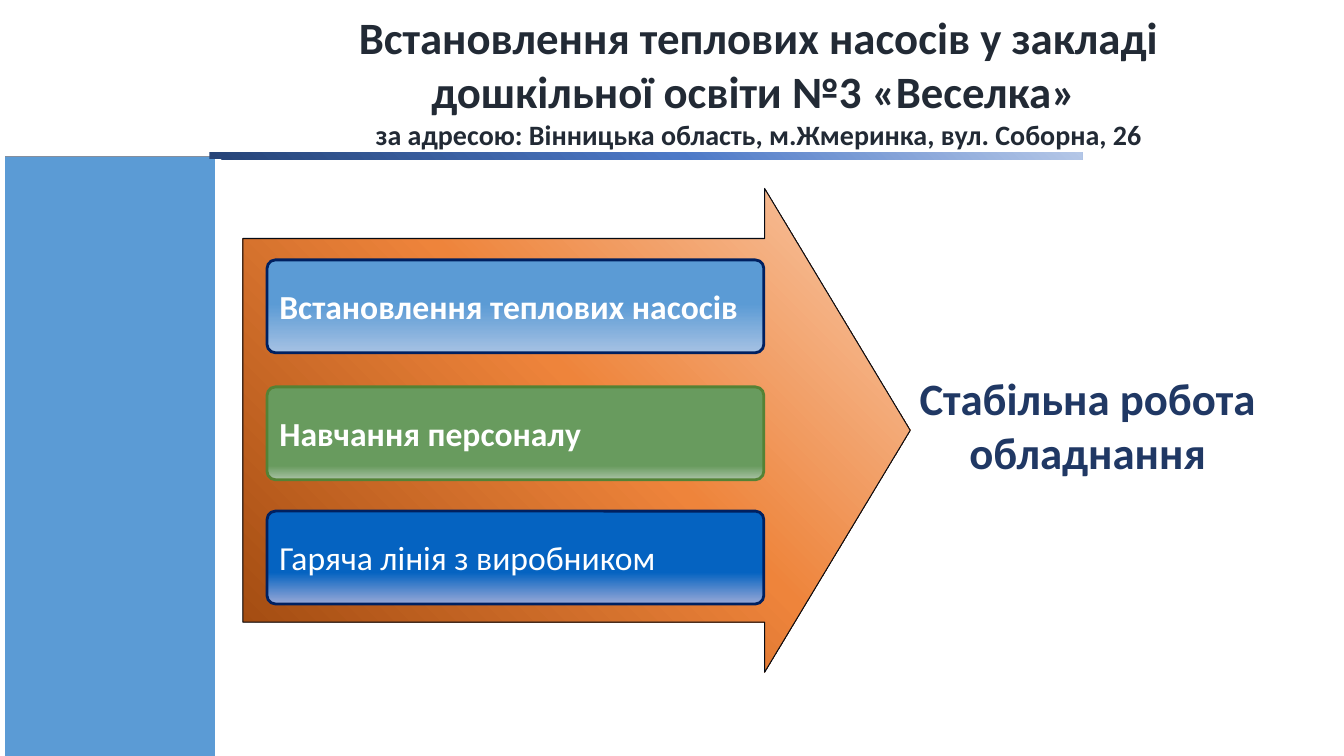
import lxml.etree
import pptx
import pptx.dml.color
import pptx.enum.dml
import pptx.enum.shapes
import pptx.enum.text
import pptx.oxml.ns
import pptx.util

Cm, Pt = pptx.util.Cm, pptx.util.Pt
RGBColor = pptx.dml.color.RGBColor
SHAPE = pptx.enum.shapes.MSO_SHAPE
ALIGN = pptx.enum.text.PP_ALIGN
ANCHOR = pptx.enum.text.MSO_ANCHOR
qn = pptx.oxml.ns.qn

WHITE = RGBColor(0xFF, 0xFF, 0xFF)
SKY = RGBColor(0x5B, 0x9B, 0xD5)
SLATE = RGBColor(0x44, 0x54, 0x6A)
INK = RGBColor(0x22, 0x2A, 0x35)
NAVY = RGBColor(0x20, 0x38, 0x64)
DEEP_NAVY = RGBColor(0x00, 0x20, 0x60)
GREEN_EDGE = RGBColor(0x54, 0x82, 0x35)
NEAR_BLACK = RGBColor(0x06, 0x0B, 0x14)
BLUE_FADE = [(0, RGBColor(0xB4, 0xC7, 0xE7)), (46, RGBColor(0x4D, 0x79, 0xC7)),
             (100, RGBColor(0x26, 0x44, 0x78))]
ORANGE_FADE = [(0, RGBColor(0xF8, 0xCB, 0xAD)), (46, RGBColor(0xEE, 0x84, 0x3B)),
               (100, RGBColor(0x9E, 0x48, 0x0E))]
SKY_FADE = [(47, SKY), (100, RGBColor(0xA5, 0xC1, 0xE3))]
GREEN_FADE = [(85, RGBColor(0x68, 0x9B, 0x5E)), (100, RGBColor(0xAA, 0xC2, 0xA6))]
ROYAL_FADE = [(66, RGBColor(0x05, 0x63, 0xC1)), (100, RGBColor(0x98, 0xA8, 0xD6))]

HEADING = "Встановлення теплових насосів у закладі дошкільної освіти №3 «Веселка» "
ADDRESS = "за адресою: Вінницька область, м.Жмеринка, вул. Соборна, 26"
MEASURES = [
    ("Встановлення теплових насосів", 6.55, SKY_FADE, DEEP_NAVY, True),
    ("Навчання персоналу", 9.75, GREEN_FADE, GREEN_EDGE, True),
    ("Гаряча лінія з виробником", 12.88, ROYAL_FADE, DEEP_NAVY, False),
]
OUTCOME = "Стабільна робота обладнання"

CORNER = 0.091
RADIAL = ('<a:path {ns} path="circle"><a:fillToRect l="100000" t="0" r="0" b="100000"/></a:path>')
DOWNWARD = '<a:lin {ns} ang="5400000" scaled="1"/>'


def apply(target, **values):
    """Set every given format value on the target."""
    for attribute, value in values.items():
        setattr(target, attribute, value)


def add_part(slide, preset, box, adjustments=()):
    """Add a shape without shadow, fill or outline, placed in centimetres."""
    part = slide.shapes.add_shape(preset, *map(Cm, box))
    part.shadow.inherit = False
    part.fill.background()
    part.line.fill.background()
    for index, value in enumerate(adjustments):
        part.adjustments[index] = value
    return part


def fade(part, stops, direction):
    """Fill a shape with gradient stops running in a direction."""
    part.fill.gradient()
    gradient = part.fill._xPr.find(qn("a:gradFill"))
    for child in list(gradient):
        gradient.remove(child)
    stop_list = lxml.etree.SubElement(gradient, qn("a:gsLst"))
    for position, colour in stops:
        stop = lxml.etree.SubElement(stop_list, qn("a:gs"), pos=str(position * 1000))
        lxml.etree.SubElement(stop, qn("a:srgbClr"), val=str(colour))
    gradient.append(pptx.oxml.parse_xml(direction.format(ns=pptx.oxml.ns.nsdecls("a"))))


def outline(part, colour, width):
    """Draw a solid outline around a shape."""
    part.line.color.rgb = colour
    part.line.width = Pt(width)


def write(paragraph, text, size, colour, bold=True):
    """Add one formatted run to a paragraph."""
    run = paragraph.add_run()
    run.text = text
    apply(run.font, name="Calibri", size=Pt(size), bold=bold)
    run.font.color.rgb = colour


def build():
    """Build the slide and save it."""
    deck = pptx.Presentation()
    apply(deck, slide_width=Cm(33.87), slide_height=Cm(19.05))
    slide = deck.slides.add_slide(deck.slide_layouts[5])

    sidebar = add_part(slide, SHAPE.RECTANGLE, (0.13, 3.94, 5.28, 15.11))
    sidebar.fill.patterned()
    sidebar.fill.pattern = pptx.enum.dml.MSO_PATTERN.DARK_HORIZONTAL
    sidebar.fill.fore_color.rgb = SKY
    sidebar.fill.back_color.rgb = SLATE

    divider = add_part(slide, SHAPE.RECTANGLE, (5.28, 3.84, 22, 0.18))
    fade(divider, BLUE_FADE, RADIAL)

    arrow = add_part(slide, SHAPE.RIGHT_ARROW, (6.12, 4.75, 16.82, 12.19), (0.793, 0.301))
    fade(arrow, ORANGE_FADE, RADIAL)
    outline(arrow, NEAR_BLACK, 0.75)

    for text, top, stops, edge, bold in MEASURES:
        measure = add_part(slide, SHAPE.ROUNDED_RECTANGLE, (6.73, top, 12.52, 2.34), (CORNER,))
        fade(measure, stops, DOWNWARD)
        outline(measure, edge, 2)
        apply(measure.text_frame, word_wrap=False, vertical_anchor=ANCHOR.MIDDLE)
        line = measure.text_frame.paragraphs[0]
        line.alignment = ALIGN.JUSTIFY
        write(line, text, 24, WHITE, bold)

    outcome = add_part(slide, SHAPE.ROUNDED_RECTANGLE, (22.73, 8.89, 9.37, 3.61), (CORNER,))
    apply(outcome.text_frame, word_wrap=True, vertical_anchor=ANCHOR.MIDDLE)
    line = outcome.text_frame.paragraphs[0]
    line.alignment = ALIGN.CENTER
    write(line, OUTCOME, 32, NAVY)

    title = slide.shapes.title
    apply(title, left=Cm(6.12), top=Cm(0.74), width=Cm(26.01), height=Cm(2.59))
    apply(title.text_frame, word_wrap=True, vertical_anchor=ANCHOR.MIDDLE,
          auto_size=pptx.enum.text.MSO_AUTO_SIZE.NONE)
    line = title.text_frame.paragraphs[0]
    line.alignment = ALIGN.CENTER
    write(line, HEADING, 32, INK)
    line.add_line_break()
    write(line, ADDRESS, 20, INK)

    deck.save("out.pptx")


if __name__ == "__main__":
    build()
